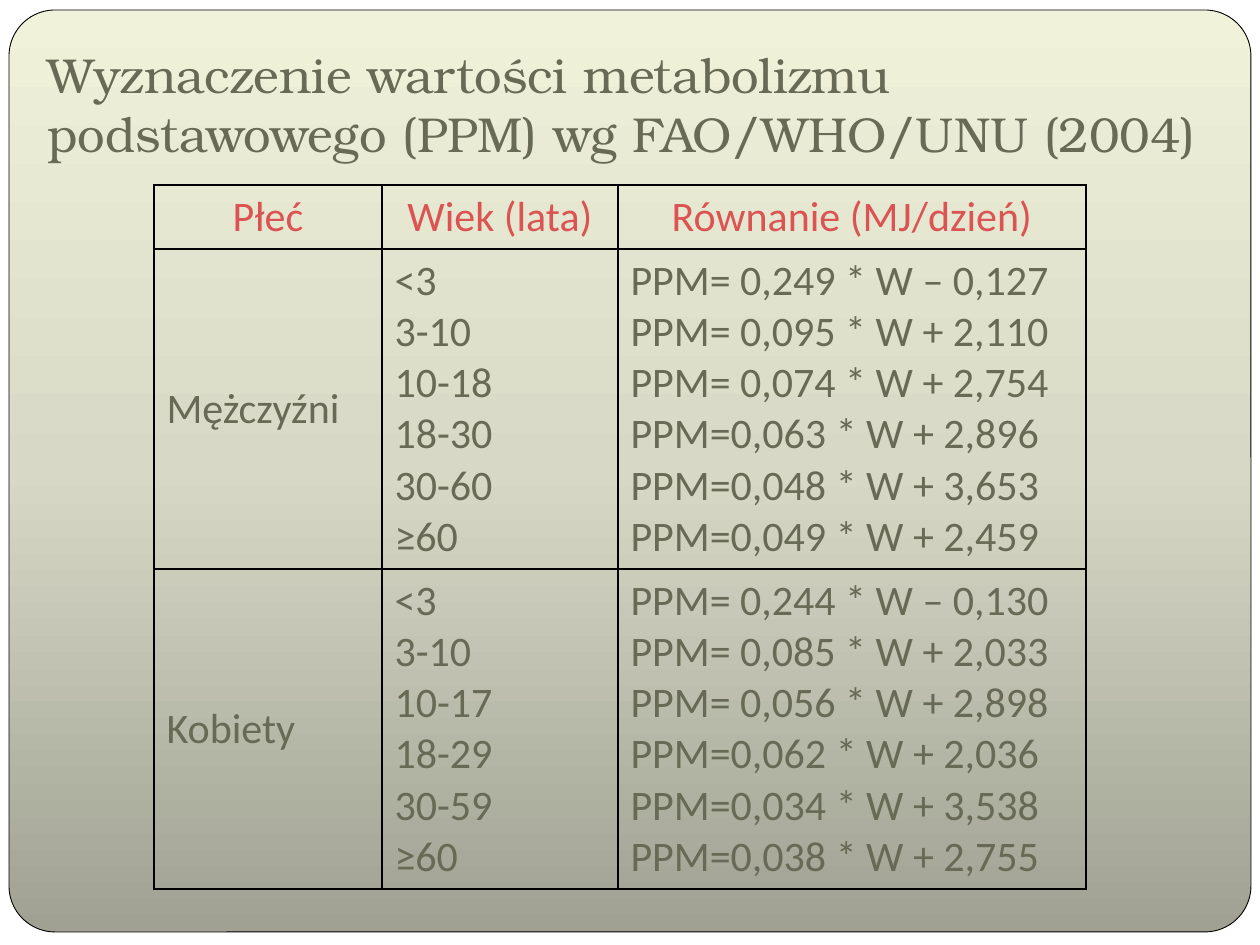
from copy import deepcopy

from lxml.etree import SubElement
from pptx import Presentation
from pptx.dml.color import RGBColor
from pptx.enum.shapes import MSO_SHAPE
from pptx.enum.text import MSO_ANCHOR, PP_ALIGN
from pptx.oxml import parse_xml
from pptx.oxml.ns import nsdecls, qn
from pptx.util import Pt

SCALE = 914400 / 126
WHITE = RGBColor(0xFF, 0xFF, 0xFF)
BLACK = RGBColor(0, 0, 0)
OLIVE = RGBColor(0x67, 0x6A, 0x55)
RED = RGBColor(0xDB, 0x53, 0x53)
DARK = RGBColor(0xA0, 0xA1, 0x92)
MID = RGBColor(0xD7, 0xD9, 0xC6)
LIGHT = RGBColor(0xF0, 0xF2, 0xDA)

TITLE = "Wyznaczenie wartości metabolizmu podstawowego (PPM) wg FAO/WHO/UNU (2004)"
HEADS = ["Płeć", "Wiek (lata)", "Równanie (MJ/dzień)"]
MEN = [
    ("<3", "PPM= 0,249 * W – 0,127"),
    ("3-10", "PPM= 0,095 * W + 2,110"),
    ("10-18", "PPM= 0,074 * W + 2,754"),
    ("18-30", "PPM=0,063 * W + 2,896"),
    ("30-60", "PPM=0,048 * W + 3,653"),
    ("≥60", "PPM=0,049 * W + 2,459"),
]
WOMEN = [
    ("<3", "PPM= 0,244 * W – 0,130"),
    ("3-10", "PPM= 0,085 * W + 2,033"),
    ("10-17", "PPM= 0,056 * W + 2,898"),
    ("18-29", "PPM=0,062 * W + 2,036"),
    ("30-59", "PPM=0,034 * W + 3,538"),
    ("≥60", "PPM=0,038 * W + 2,755"),
]


def px(size):
    """Turn pixels into EMU."""
    return round(size * SCALE)


class Page:
    """Slide with its fonts and a method for each kind of element."""

    head = "TeX Gyre Bonum"
    body = "Calibri"

    def __init__(self, deck):
        """Add a blank white slide."""
        self.slide = deck.slides.add_slide(deck.slide_layouts[6])
        fill = self.slide.background.fill
        fill.solid()
        fill.fore_color.rgb = WHITE

    def panel(self, x, y, w, h):
        """Draw the rounded panel with its three-stop gradient."""
        box = self.slide.shapes.add_shape(
            MSO_SHAPE.ROUNDED_RECTANGLE, px(x), px(y), px(w), px(h))
        box.adjustments[0] = 0.05
        box.shadow.inherit = False
        box.line.color.rgb = BLACK
        box.line.width = Pt(0.5)
        box.fill.gradient()
        box.fill.gradient_angle = 90
        stops = next(box.element.iter(qn("a:gsLst")))
        stops.insert(1, deepcopy(stops[0]))
        for stop, color, place in zip(
                box.fill.gradient_stops, (DARK, MID, LIGHT), (0, 0.5, 1)):
            stop.color.rgb = color
            stop.position = place

    def label(self, para, text, font, size, color):
        """Add one styled run to a paragraph."""
        run = para.add_run()
        run.text = text
        run.font.name = font
        run.font.size = Pt(size)
        run.font.color.rgb = color

    def title(self, text, x, y, w, h):
        """Add the title, set on the bottom of its box."""
        box = self.slide.shapes.add_textbox(px(x), px(y), px(w), px(h))
        frame = box.text_frame
        frame.word_wrap = True
        frame.vertical_anchor = MSO_ANCHOR.BOTTOM
        frame.margin_bottom = frame.margin_left
        self.label(frame.paragraphs[0], text, self.head, 28, OLIVE)

    def border(self, cell):
        """Rule all four sides of a cell."""
        props = cell._tc.get_or_add_tcPr()
        for spot, side in enumerate("LRTB"):
            line = parse_xml(f'<a:ln{side} {nsdecls("a")} w="12700"/>')
            fill = SubElement(line, qn("a:solidFill"))
            SubElement(fill, qn("a:srgbClr"), val=str(BLACK))
            props.insert(spot, line)

    def cell(self, cell, lines, color, align):
        """Fill a cell with one paragraph per line."""
        cell.fill.background()
        cell.vertical_anchor = MSO_ANCHOR.MIDDLE
        self.border(cell)
        frame = cell.text_frame
        for spot, text in enumerate(lines):
            para = frame.add_paragraph() if spot else frame.paragraphs[0]
            para.alignment = align
            props = para._p.get_or_add_pPr()
            props.set("marL", str(px(48)))
            props.set("indent", str(px(-48)))
            self.label(para, text, self.body, 24, color)

    def table(self, rows, x, y, widths, heights):
        """Add a table whose first row is the heading."""
        grid = self.slide.shapes.add_table(
            len(rows), len(widths), px(x), px(y),
            px(sum(widths)), px(sum(heights))).table
        grid.horz_banding = False
        for col, width in zip(grid.columns, widths):
            col.width = px(width)
        for spot, (row, height) in enumerate(zip(rows, heights)):
            grid.rows[spot].height = px(height)
            look = (OLIVE, PP_ALIGN.LEFT) if spot else (RED, PP_ALIGN.CENTER)
            for cell, lines in zip(grid.rows[spot].cells, row):
                self.cell(cell, lines, *look)


def main():
    """Build and save the slide."""
    deck = Presentation()
    deck.slide_width, deck.slide_height = px(1260), px(945)
    page = Page(deck)
    page.panel(9, 10, 1242, 922)
    page.title(TITLE, 35, 26, 1191, 149)
    rows = [[[text] for text in HEADS]]
    for sex, data in (("Mężczyźni", MEN), ("Kobiety", WOMEN)):
        rows.append([[sex], *zip(*data)])
    page.table(rows, 154, 185, [228, 236, 468], [64, 320, 320])
    deck.save("out.pptx")


if __name__ == "__main__":
    main()
